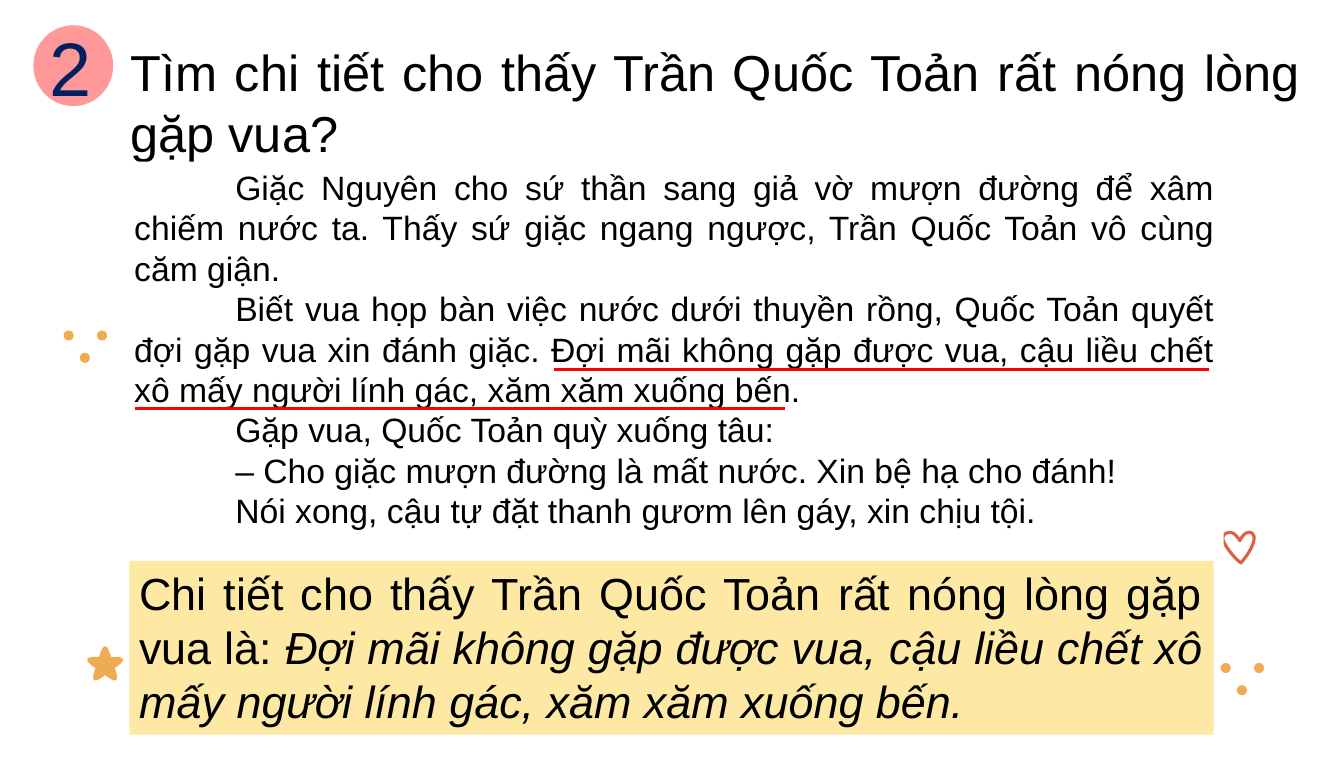
from math import cos, pi, sin

from lxml.etree import SubElement
from pptx import Presentation
from pptx.dml.color import RGBColor
from pptx.enum.shapes import MSO_CONNECTOR as CONNECTOR, MSO_SHAPE as SHAPE
from pptx.enum.text import MSO_ANCHOR as ANCHOR, MSO_AUTO_SIZE as AUTO_SIZE, PP_ALIGN as ALIGN
from pptx.oxml.ns import qn
from pptx.util import Pt

PX = 9144
BLACK = RGBColor(0x00, 0x00, 0x00)
WHITE = RGBColor(0xFF, 0xFF, 0xFF)
NAVY = RGBColor(0x00, 0x20, 0x60)
PINK = RGBColor(0xFF, 0x99, 0x99)
CREAM = RGBColor(0xFD, 0xE9, 0xA4)
ORANGE = RGBColor(0xEE, 0xAB, 0x4F)
CORAL = RGBColor(0xDA, 0x63, 0x43)
RED = RGBColor(0xFF, 0x00, 0x00)

presentation = Presentation()
presentation.slide_width = 1330 * PX
presentation.slide_height = 750 * PX
slide = presentation.slides.add_slide(presentation.slide_layouts[5])
shapes = slide.shapes


def add_filled(kind, box, color):
    shape = shapes.add_shape(kind, *(value * PX for value in box))
    shape.shadow.inherit = False
    shape.fill.solid()
    shape.fill.fore_color.rgb = color
    shape.line.fill.background()
    return shape


def add_curve(start, segments):
    points, (x0, y0) = [], start
    for (x1, y1), (x2, y2), (x3, y3) in segments:
        for step in range(1, 13):
            t = step / 12
            weights = ((1 - t) ** 3, 3 * t * (1 - t) ** 2, 3 * t * t * (1 - t), t ** 3)
            points.append(tuple(
                round(PX * sum(w * v for w, v in zip(weights, values)))
                for values in ((x0, x1, x2, x3), (y0, y1, y2, y3))
            ))
        x0, y0 = x3, y3
    builder = shapes.build_freeform(round(start[0] * PX), round(start[1] * PX), scale=1)
    builder.add_line_segments(points, close=True)
    shape = builder.convert_to_shape()
    shape.shadow.inherit = False
    return shape


for left, top in ((63, 327), (1208, 656)):
    for dx, dy in ((0, 0), (16, 22), (33, 0)):
        add_filled(SHAPE.OVAL, (left + dx, top + dy, 10, 10), ORANGE)

heart = add_curve((1227, 535), [
    ((1223, 529), (1220, 526), (1216, 527)),
    ((1213, 527), (1211, 529), (1210, 532)),
    ((1210, 537), (1219, 550), (1228, 557)),
    ((1236, 548), (1242, 537), (1241, 531)),
    ((1240, 527), (1237, 526), (1235, 527)),
    ((1232, 527), (1229, 531), (1227, 535)),
])
heart.fill.background()
heart.line.color.rgb = CORAL
heart.line.width = Pt(2.25)

star_points = []
for tip in range(5):
    for offset, radius in ((-36, 10), (-5, 22), (5, 22)):
        angle = (72 * tip + offset) * pi / 180
        star_points.append((104 + radius * sin(angle), 658 - radius * cos(angle)))
star_points.append(star_points[0])
star = add_curve(star_points[0], [star_points[i:i + 3] for i in range(1, 16, 3)])
star.fill.solid()
star.fill.fore_color.rgb = ORANGE
star.line.fill.background()

add_filled(SHAPE.OVAL, (33, 25, 79, 80), PINK)
number = shapes.add_textbox(36 * PX, 39 * PX, 80 * PX, 52 * PX)
question = shapes.title
for name, value in {"left": 119, "top": 36, "width": 1178, "height": 131}.items():
    setattr(question, name, value * PX)
story = add_filled(SHAPE.RECTANGLE, (123, 160, 1088, 414), WHITE)
answer = add_filled(SHAPE.RECTANGLE, (128, 555, 1073, 172), CREAM)

story_lines = [
    "Giặc Nguyên cho sứ thần sang giả vờ mượn đường để xâm chiếm nước ta. "
    "Thấy sứ giặc ngang ngược, Trần Quốc Toản vô cùng căm giận.",
    "Biết vua họp bàn việc nước dưới thuyền rồng, Quốc Toản quyết đợi gặp vua "
    "xin đánh giặc. Đợi mãi không gặp được vua, cậu liều chết xô mấy người "
    "lính gác, xăm xăm xuống bến.",
    "Gặp vua, Quốc Toản quỳ xuống tâu:",
    "– Cho giặc mượn đường là mất nước. Xin bệ hạ cho đánh!",
    "Nói xong, cậu tự đặt thanh gươm lên gáy, xin chịu tội.",
]
texts = [
    (number, [["2"]], 54, NAVY, 0),
    (question, [["Tìm chi tiết cho thấy Trần Quốc Toản rất nóng lòng gặp vua?"]], 36, BLACK, 0),
    (story, [[line] for line in story_lines], 24, BLACK, 100),
    (answer, [[
        "Chi tiết cho thấy Trần Quốc Toản rất nóng lòng gặp vua là: ",
        "Đợi mãi không gặp được vua, cậu liều chết xô mấy người lính gác, xăm xăm xuống bến.",
    ]], 32, BLACK, 0),
]
for shape, paragraphs, size, color, indent in texts:
    frame = shape.text_frame
    frame_format = {"word_wrap": True, "auto_size": AUTO_SIZE.NONE, "vertical_anchor": ANCHOR.TOP}
    for name, value in frame_format.items():
        setattr(frame, name, value)
    for index, runs in enumerate(paragraphs):
        paragraph = frame.add_paragraph() if index else frame.paragraphs[0]
        paragraph.alignment = ALIGN.JUSTIFY
        if indent:
            paragraph._p.get_or_add_pPr().set("indent", str(indent * PX))
        for order, text in enumerate(runs):
            run = paragraph.add_run()
            run.text = text
            run.font.color.rgb = color
            for name, value in {"name": "Arial", "size": Pt(size), "italic": order == 1}.items():
                setattr(run.font, name, value)

number.text_frame.vertical_anchor = ANCHOR.MIDDLE
for side in ("left", "right", "top", "bottom"):
    setattr(number.text_frame, f"margin_{side}", 13 * PX)

for start, end, height in ((134, 777, 404), (548, 1196, 366)):
    underline = shapes.add_connector(
        CONNECTOR.STRAIGHT, start * PX, height * PX, end * PX, height * PX)
    underline.line.color.rgb = RED
    underline.line.width = Pt(2.25)
    SubElement(underline._element.spPr, qn("a:effectLst"))

presentation.save("out.pptx")
